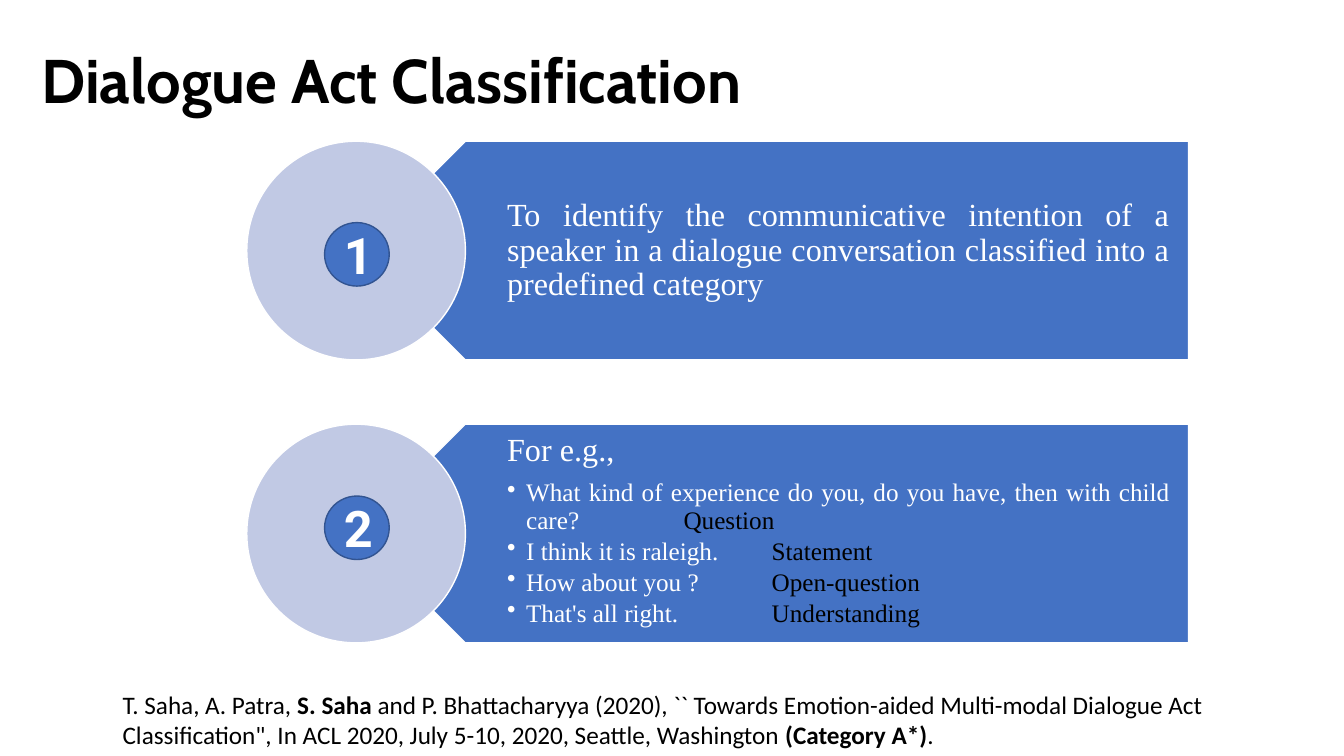
from lxml import etree
from pptx import Presentation
from pptx.dml.color import RGBColor
from pptx.enum import shapes, text
from pptx.oxml.ns import qn
from pptx.util import Cm, Pt

BLUE = RGBColor(0x44, 0x72, 0xC4)
NAVY = RGBColor(0x32, 0x54, 0x91)
PALE = RGBColor(0xC1, 0xC9, 0xE4)
WHITE = RGBColor(0xFF, 0xFF, 0xFF)
BLACK = RGBColor(0, 0, 0)
SERIF = "Times New Roman"
SIDE = 5.51
ROWS = [(3.56, 5.61, "1"), (10.69, 12.5, "2")]
GOAL = ("To identify the communicative intention of a speaker in a dialogue "
        "conversation classified into a predefined category")
ACTS = [
    ("What kind of experience do you, do you have, then with child care?\t\t", "Question"),
    ("I think it is raleigh.\t", "Statement"),
    ("How about you ?\t", "Open-question"),
    ("That's all right.\t\t", "Understanding"),
]
CITE = [
    ("T. Saha, A. Patra, ", False),
    ("S. Saha", True),
    (" and P. Bhattacharyya (2020), `` Towards Emotion-aided Multi-modal Dialogue Act "
     "Classification\", In ACL 2020, July 5-10, 2020, Seattle, Washington ", False),
    ("(Category A*)", True),
    (".", False),
]


def style(para, face, size, color, bold=False):
    """Set the font of a whole paragraph."""
    font = para.font
    font.name, font.size, font.bold = face, Pt(size), bold
    font.color.rgb = color


def add_form(slide, kind, box, fill, line):
    """Add a filled preset shape with a thin outline."""
    form = slide.shapes.add_shape(kind, *map(Cm, box))
    form.shadow.inherit = False
    form.fill.solid()
    form.fill.fore_color.rgb = fill
    form.line.color.rgb = line
    form.line.width = Pt(1)
    return form


def add_box(slide, box, anchor=text.MSO_ANCHOR.TOP):
    """Add a wrapping text box and return its frame."""
    frame = slide.shapes.add_textbox(*map(Cm, box)).text_frame
    frame.word_wrap = True
    frame.vertical_anchor = anchor
    return frame


def add_row(slide, top):
    """Add a banner pointing left with a disc over its tip."""
    plate = add_form(slide, shapes.MSO_SHAPE.PENTAGON, (8.97, top, 20.98, SIDE), BLUE, WHITE)
    plate.rotation = 180
    add_form(slide, shapes.MSO_SHAPE.OVAL, (6.22, top, SIDE, SIDE), PALE, WHITE)


def add_panel(slide, top, anchor):
    """Add the text area of a banner."""
    frame = add_box(slide, (10.34, top, 19.61, SIDE), anchor)
    frame.margin_left, frame.margin_right = Cm(2.44), Cm(0.46)
    frame.margin_top = frame.margin_bottom = Cm(0.25)
    return frame


def add_lead(frame, words, align):
    """Fill the first paragraph of a banner."""
    para = frame.paragraphs[0]
    para.text = words
    para.alignment = align
    para.line_spacing = 0.9
    para.space_after = Pt(8)
    style(para, SERIF, 23, WHITE)


def add_act(frame, words, act):
    """Add a bulleted utterance followed by its dialogue act."""
    para = frame.add_paragraph()
    para.alignment = text.PP_ALIGN.JUSTIFY
    para.line_spacing = 0.9
    para.space_after = Pt(2.7)
    props = para._p.get_or_add_pPr()
    props.set("marL", str(Cm(0.48)))
    props.set("indent", str(Cm(-0.48)))
    props.set("defTabSz", str(Pt(63)))
    etree.SubElement(props, qn("a:buChar")).set("char", "•")
    style(para, SERIF, 18, WHITE)
    for part, color in ((words, WHITE), (act, BLACK)):
        run = para.add_run()
        run.text = part
        run.font.color.rgb = color


def add_badge(slide, top, digit):
    """Add a numbered disc."""
    disc = add_form(slide, shapes.MSO_SHAPE.OVAL, (8.18, top, 1.63, 1.6), BLUE, NAVY)
    frame = disc.text_frame
    frame.vertical_anchor = text.MSO_ANCHOR.MIDDLE
    para = frame.paragraphs[0]
    para.text = digit
    para.alignment = text.PP_ALIGN.CENTER
    style(para, "Roboto", 36, WHITE, True)


def add_title(slide, words):
    """Add the slide heading."""
    para = add_box(slide, (0.79, 0.71, 29.21, 2.79), text.MSO_ANCHOR.MIDDLE).paragraphs[0]
    para.text = words
    para.line_spacing = 0.9
    style(para, "Cabin", 44, BLACK, True)


def add_cite(slide, parts):
    """Add the reference with its bold parts."""
    para = add_box(slide, (2.84, 17.25, 28.91, 1.8)).paragraphs[0]
    style(para, "Calibri", 18, BLACK)
    for words, bold in parts:
        run = para.add_run()
        run.text = words
        run.font.bold = bold


def main():
    """Build the slide and save it."""
    deck = Presentation()
    deck.slide_width, deck.slide_height = Cm(33.87), Cm(19.05)
    slide = deck.slides.add_slide(deck.slide_layouts[6])
    add_title(slide, "Dialogue Act Classification")
    for top, mid, digit in ROWS:
        add_row(slide, top)
        add_badge(slide, mid, digit)
    goal = add_panel(slide, ROWS[0][0], text.MSO_ANCHOR.MIDDLE)
    add_lead(goal, GOAL, text.PP_ALIGN.JUSTIFY)
    cases = add_panel(slide, ROWS[1][0], text.MSO_ANCHOR.TOP)
    add_lead(cases, "For e.g.,", text.PP_ALIGN.LEFT)
    for words, act in ACTS:
        add_act(cases, words, act)
    add_cite(slide, CITE)
    deck.save("out.pptx")


if __name__ == "__main__":
    main()
